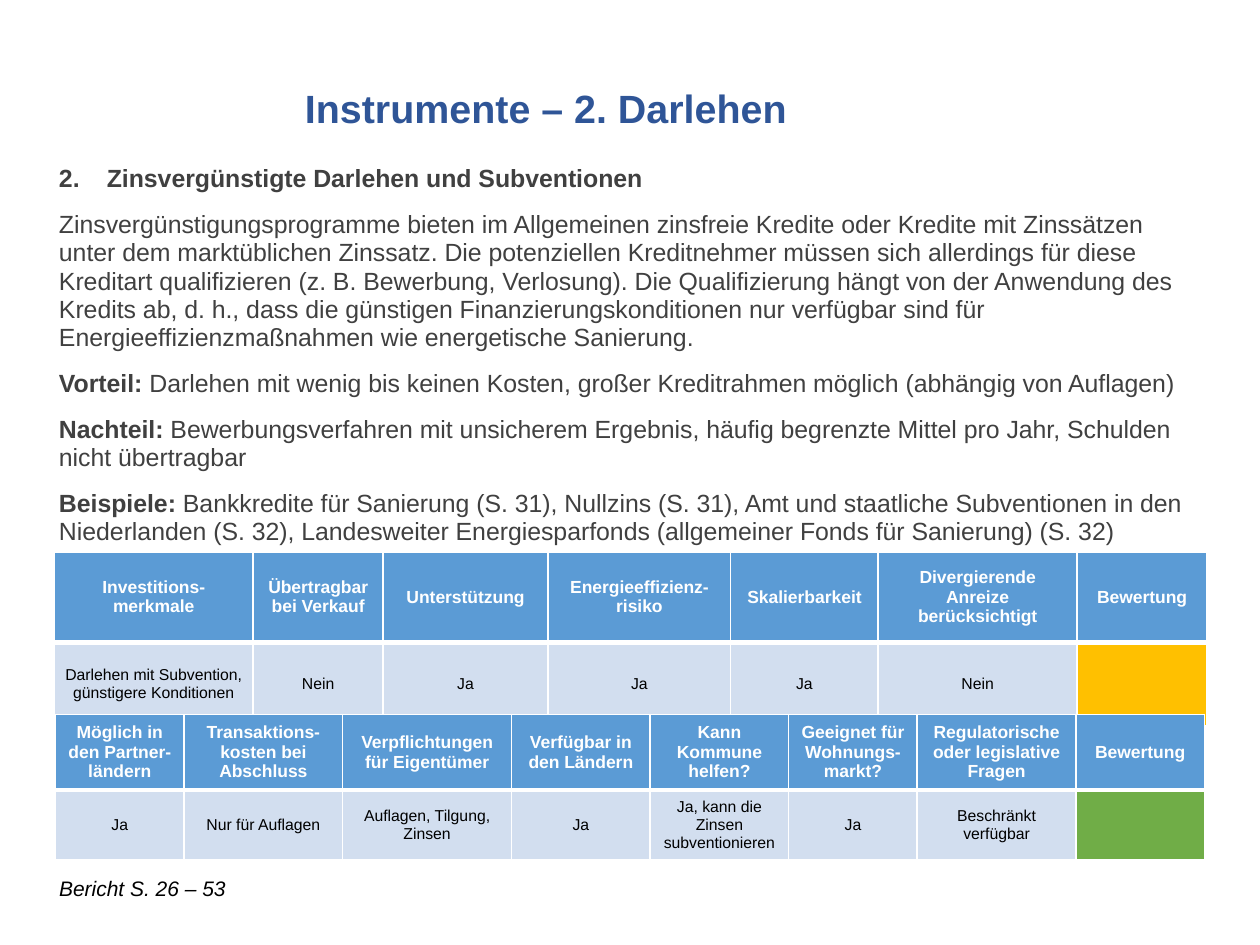
import pptx
import pptx.util
import pptx.dml.color
import pptx.enum.text
import pptx.oxml
import pptx.oxml.ns
from pptx.util import Inches, Pt

BLUE, PALE, WHITE, BLACK, GREY = "5B9BD5", "D2DEEF", "FFFFFF", "000000", "404040"
MIDDLE = pptx.enum.text.MSO_ANCHOR.MIDDLE
CENTER = pptx.enum.text.PP_ALIGN.CENTER
LEFT = pptx.enum.text.PP_ALIGN.LEFT

TITLE = "Instrumente – 2. Darlehen"
SOURCE = "Bericht S. 26 – 53"
HEADING = "Zinsvergünstigte Darlehen und Subventionen"

# (bold lead-in, text)
BODY = [
    (HEADING, ""),
    ("", "Zinsvergünstigungsprogramme bieten im Allgemeinen zinsfreie Kredite oder Kredite mit "
     "Zinssätzen unter dem marktüblichen Zinssatz. Die potenziellen Kreditnehmer müssen sich "
     "allerdings für diese Kreditart qualifizieren (z. B. Bewerbung, Verlosung). Die "
     "Qualifizierung hängt von der Anwendung des Kredits ab, d. h., dass die günstigen "
     "Finanzierungskonditionen nur verfügbar sind für Energieeffizienzmaßnahmen wie "
     "energetische Sanierung."),
    ("Vorteil:", " Darlehen mit wenig bis keinen Kosten, großer Kreditrahmen möglich "
     "(abhängig von Auflagen)"),
    ("Nachteil:", " Bewerbungsverfahren mit unsicherem Ergebnis, häufig begrenzte Mittel pro "
     "Jahr, Schulden nicht übertragbar"),
    ("Beispiele: ", "Bankkredite für Sanierung (S. 31), Nullzins (S. 31), Amt und staatliche "
     "Subventionen in den Niederlanden (S. 32), Landesweiter Energiesparfonds (allgemeiner "
     "Fonds für Sanierung) (S. 32)"),
]

TABLES = [
    {"at": (0.43, 4.38), "heights": (0.72, 0.66), "rating": "FFC000",
     "columns": [
         (1.58, "Investitions-merkmale", "Darlehen mit Subvention, günstigere Konditionen"),
         (1.03, "Übertragbar bei Verkauf", "Nein"),
         (1.31, "Unterstützung", "Ja"),
         (1.45, "Energieeffizienz-risiko", "Ja"),
         (1.17, "Skalierbarkeit", "Ja"),
         (1.58, "Divergierende Anreize berücksichtigt", "Nein"),
         (1.03, "Bewertung", "")]},
    {"at": (0.44, 5.67), "heights": (0.6, 0.55), "rating": "70AD47",
     "columns": [
         (1.02, "Möglich in den Partner-ländern", "Ja"),
         (1.26, "Transaktions-kosten bei Abschluss", "Nur für Auflagen"),
         (1.34, "Verpflichtungen für Eigentümer", "Auflagen, Tilgung, Zinsen"),
         (1.1, "Verfügbar in den Ländern", "Ja"),
         (1.1, "Kann Kommune helfen?", "Ja, kann die Zinsen subventionieren"),
         (1.02, "Geeignet für Wohnungs-markt?", "Ja"),
         (1.26, "Regulatorische oder legislative Fragen", "Beschränkt verfügbar"),
         (1.02, "Bewertung", "")]},
]


def color(value):
    return pptx.dml.color.RGBColor.from_string(value)


def add_text(p, text, size=14.2, fill=GREY, bold=False, italic=False):
    r = p.add_run()
    r.text = text
    r.font.name = "Arial"
    r.font.size = Pt(size)
    r.font.bold = bold
    r.font.italic = italic
    r.font.color.rgb = color(fill)


def set_number(p, start, indent):
    """Number a paragraph from start, with a hanging indent in inches."""
    pPr = p._p.get_or_add_pPr()
    pPr.set("marL", str(Inches(indent)))
    pPr.set("indent", str(-Inches(indent)))
    pPr.append(pptx.oxml.parse_xml(
        f'<a:buAutoNum {pptx.oxml.ns.nsdecls("a")} type="arabicPeriod" startAt="{start}"/>'))


def set_borders(cell, widths):
    """Give a cell white borders; widths in points for left, right, top, bottom."""
    tcPr = cell._tc.get_or_add_tcPr()
    for i, (side, width) in enumerate(zip("LRTB", widths)):
        tcPr.insert(i, pptx.oxml.parse_xml(
            f'<a:ln{side} {pptx.oxml.ns.nsdecls("a")} w="{Pt(width)}"><a:solidFill>'
            f'<a:srgbClr val="{WHITE}"/></a:solidFill></a:ln{side}>'))


def add_textbox(s, *at):
    tf = s.shapes.add_textbox(*map(Inches, at)).text_frame
    tf.word_wrap = True
    return tf


def add_rating_table(s, at, heights, rating, columns):
    width = sum(c[0] for c in columns)
    table = s.shapes.add_table(2, len(columns), *map(Inches, (*at, width, sum(heights)))).table
    for row, height in zip(table.rows, heights):
        row.height = Inches(height)
    for i, (col_width, *texts) in enumerate(columns):
        table.columns[i].width = Inches(col_width)
        for j, text in enumerate(texts):
            cell = table.cell(j, i)
            cell.vertical_anchor = MIDDLE
            cell.margin_left = cell.margin_right = Inches(0.08)
            cell.fill.solid()
            cell.fill.fore_color.rgb = color(BLUE if j == 0 else PALE if text else rating)
            set_borders(cell, (1, 1, 1, 3) if j == 0 else (1, 1, 3, 1))
            p = cell.text_frame.paragraphs[0]
            p.alignment = CENTER
            if j == 0:
                add_text(p, text, size=10, fill=WHITE, bold=True)
            elif text:
                add_text(p, text, size=9, fill=BLACK)


def main():
    prs = pptx.Presentation()
    prs.slide_width, prs.slide_height = Inches(10), Inches(7.5)
    s = prs.slides.add_slide(prs.slide_layouts[5])

    title = s.shapes.title
    title.left, title.top, title.width, title.height = map(Inches, (2.32, 0.6, 6.28, 0.56))
    title.text_frame.vertical_anchor = MIDDLE
    p = title.text_frame.paragraphs[0]
    p.alignment = LEFT
    p.line_spacing = 0.9
    add_text(p, TITLE, size=22.5, fill="2F5597", bold=True)

    tf = add_textbox(s, 0.37, 1.26, 9.2, 4.3)
    for i, (lead, text) in enumerate(BODY):
        p = tf.add_paragraph() if i else tf.paragraphs[0]
        p.line_spacing = 0.95
        if i:
            p.space_before = Pt(10)
        else:
            set_number(p, start=2, indent=0.38)
        if lead:
            add_text(p, lead, bold=True)
        if text:
            add_text(p, text)

    tf = add_textbox(s, 0.37, 6.9, 2.32, 0.3)
    add_text(tf.paragraphs[0], SOURCE, size=12, fill=BLACK, italic=True)

    for table in TABLES:
        add_rating_table(s, **table)
    prs.save("out.pptx")


if __name__ == "__main__":
    main()
